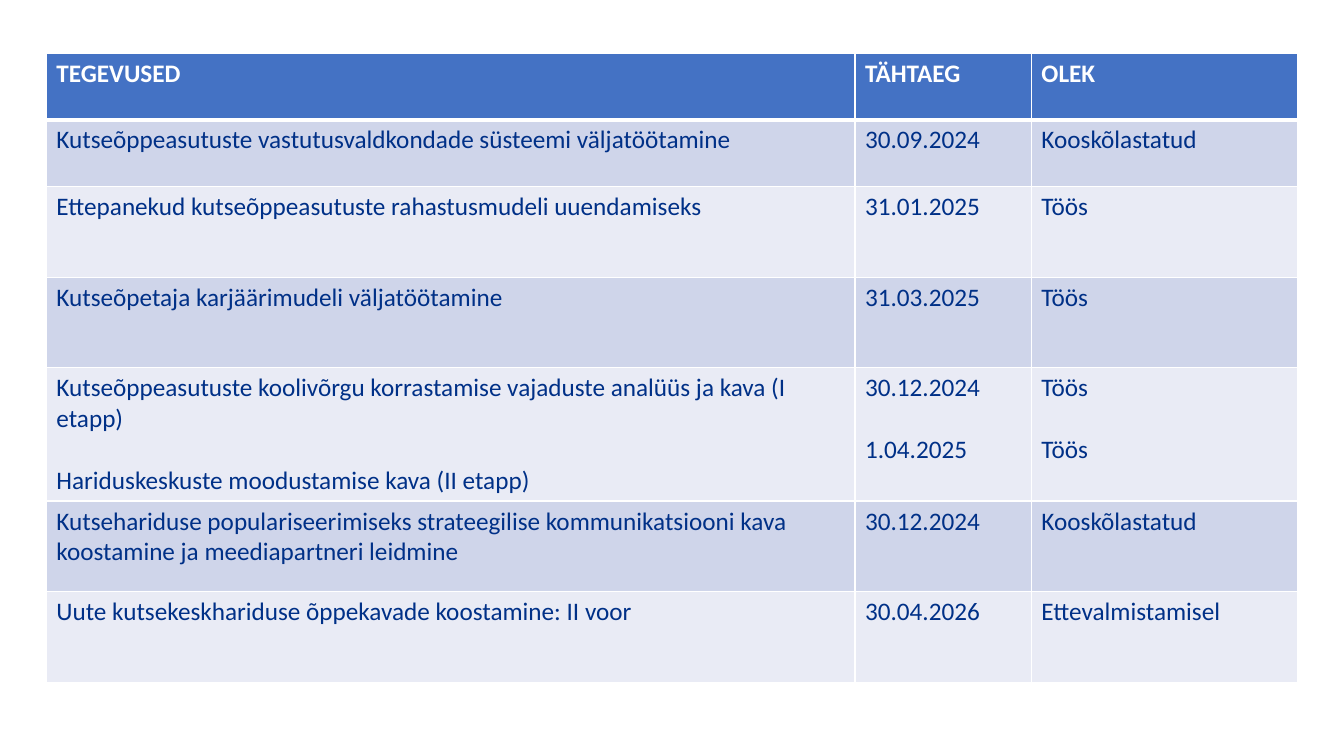
from lxml import etree
from pptx import Presentation
from pptx.dml.color import RGBColor
from pptx.oxml.ns import qn
from pptx.util import Inches, Pt

# Content: each cell is a list of paragraphs
HEADER = [["TEGEVUSED"], ["TÄHTAEG"], ["OLEK"]]
ACTIVITIES = [
    [["Kutseõppeasutuste vastutusvaldkondade süsteemi väljatöötamine"],
     ["30.09.2024"], ["Kooskõlastatud"]],
    [["Ettepanekud kutseõppeasutuste rahastusmudeli uuendamiseks"],
     ["31.01.2025"], ["Töös"]],
    [["Kutseõpetaja karjäärimudeli väljatöötamine"],
     ["31.03.2025"], ["Töös"]],
    [["Kutseõppeasutuste koolivõrgu korrastamise vajaduste analüüs ja kava (I etapp)",
      "Hariduskeskuste moodustamise kava (II etapp)"],
     ["30.12.2024", "1.04.2025"], ["Töös", "Töös"]],
    [["Kutsehariduse populariseerimiseks strateegilise kommunikatsiooni kava "
      "koostamine ja meediapartneri leidmine"],
     ["30.12.2024"], ["Kooskõlastatud"]],
    [["Uute kutsekeskhariduse õppekavade koostamine: II voor"],
     ["30.04.2026"], ["Ettevalmistamisel"]],
]
COL_WIDTHS = [8.02, 1.75, 2.64]
ROW_HEIGHTS = [0.66, 0.66, 0.9, 0.9, 1.29, 0.9, 0.9]
LEFT, TOP = 0.46, 0.53

# Style
FONT, SIZE, LINE_GAP = "Calibri", 18, 22
WHITE, NAVY, BLUE = "FFFFFF", "003087", "4472C4"
BANDS = ["E9EBF5", "CFD5EA"]


def color(value):
    return RGBColor.from_string(value)


def set_borders(cell, top, bottom):
    tc_pr = cell._tc.get_or_add_tcPr()
    for side, width in (("L", 1), ("R", 1), ("T", top), ("B", bottom)):
        ln = etree.SubElement(tc_pr, qn(f"a:ln{side}"), w=str(Pt(width)))
        fill = etree.SubElement(ln, qn("a:solidFill"))
        etree.SubElement(fill, qn("a:srgbClr"), val=WHITE)


def fill_cell(cell, paragraphs, row):
    is_header = row == 0
    set_borders(cell, 3 if row == 1 else 1, 3 if is_header else 1)
    cell.fill.solid()
    cell.fill.fore_color.rgb = color(BLUE if is_header else BANDS[row % 2])
    tf = cell.text_frame
    tf.text = "\n".join(paragraphs)
    for i, p in enumerate(tf.paragraphs):
        if i:
            p.space_before = Pt(LINE_GAP)
        font = p.runs[0].font
        font.name, font.size, font.bold = FONT, Pt(SIZE), is_header
        font.color.rgb = color(WHITE if is_header else NAVY)


prs = Presentation()
prs.slide_width, prs.slide_height = Inches(13.33), Inches(7.5)
s = prs.slides.add_slide(prs.slide_layouts[6])

# Table
rows = [HEADER] + ACTIVITIES
table = s.shapes.add_table(
    len(rows), len(COL_WIDTHS), Inches(LEFT), Inches(TOP),
    Inches(sum(COL_WIDTHS)), Inches(sum(ROW_HEIGHTS))).table
for column, width in zip(table.columns, COL_WIDTHS):
    column.width = Inches(width)
for r, (cells, height) in enumerate(zip(rows, ROW_HEIGHTS)):
    table.rows[r].height = Inches(height)
    for c, paragraphs in enumerate(cells):
        fill_cell(table.cell(r, c), paragraphs, r)

prs.save("out.pptx")
